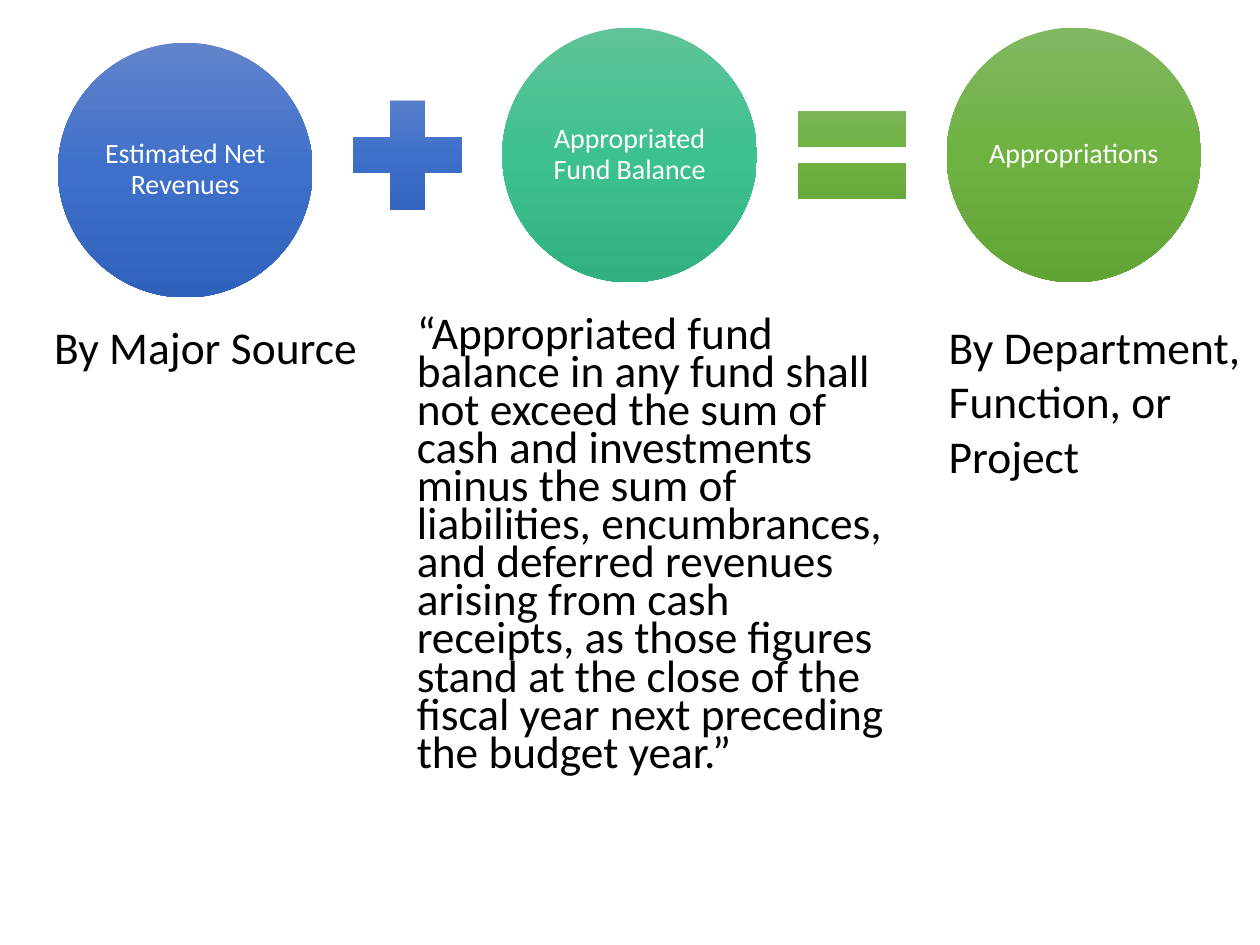
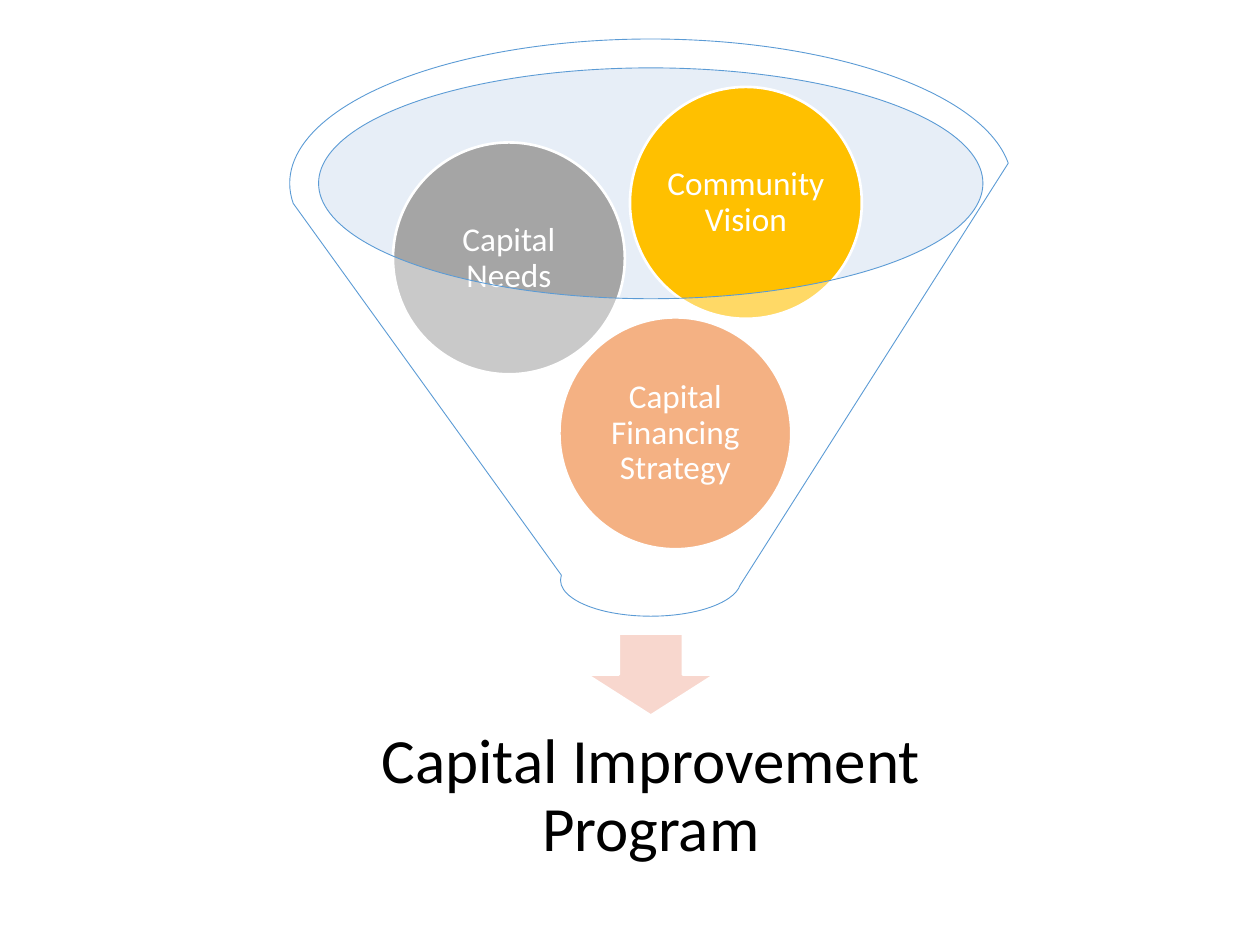
from copy import deepcopy

from lxml.etree import SubElement
from pptx import Presentation
from pptx.dml.color import RGBColor
from pptx.enum.shapes import MSO_SHAPE
from pptx.enum.text import MSO_ANCHOR, PP_ALIGN
from pptx.oxml.ns import qn
from pptx.util import Pt

FONT = "Calibri"
WHITE, BLACK = "FFFFFF", "000000"
BLUE = ("6183CB", "3E70CA", "3062BB")
TEAL = ("60C39A", "3DC18F", "31B080")
GREEN = ("81B861", "6FB242", "62A336")
RIM, FUNNEL_LINE, ARROW = "C4D5EB", "5B9BD5", "F8D7CE"
ORANGE, GRAY, GOLD = "ED7D31", "A5A5A5", "FFC000"


def rgb(value):
    return RGBColor.from_string(value)


def write(sp, text, size, color=BLACK, align=PP_ALIGN.LEFT, anchor=MSO_ANCHOR.TOP,
          spacing=1.0, insets=(7.2, 3.6)):
    tf = sp.text_frame
    tf.word_wrap = True
    tf.vertical_anchor = anchor
    tf.margin_left = tf.margin_right = Pt(insets[0])
    tf.margin_top = tf.margin_bottom = Pt(insets[1])
    p = tf.paragraphs[0]
    p.alignment = align
    p.line_spacing = spacing
    r = p.add_run()
    r.text = text
    r.font.name = FONT
    r.font.size = Pt(size)
    r.font.color.rgb = rgb(color)


def write_centered(sp, text, size, color, inset):
    write(sp, text, size, color, PP_ALIGN.CENTER, MSO_ANCHOR.MIDDLE, 0.9, (inset, inset))


def add_text_box(s, box):
    return s.shapes.add_textbox(*map(Pt, box))


def fill_gradient(sp, colors):
    sp.fill.gradient()
    sp.fill.gradient_angle = 270
    stops = sp._element.spPr.find(".//" + qn("a:gsLst"))
    stops.append(deepcopy(stops[-1]))
    for stop, position, color in zip(sp.fill.gradient_stops, (0, 0.5, 1), colors):
        stop.position = position
        stop.color.rgb = rgb(color)


def add_shape(s, kind, box, fill, opacity=None, line=None, width=1.5):
    sp = s.shapes.add_shape(kind, *map(Pt, box))
    sp.shadow.inherit = False
    if isinstance(fill, tuple):
        fill_gradient(sp, fill)
    else:
        sp.fill.solid()
        sp.fill.fore_color.rgb = rgb(fill)
    if opacity:
        color = sp._element.spPr.find(qn("a:solidFill"))[0]
        SubElement(color, qn("a:alpha")).set("val", str(opacity * 1000))
    if line:
        sp.line.color.rgb = rgb(line)
        sp.line.width = Pt(width)
    else:
        sp.line.fill.background()
    return sp


def add_equation(s, left, top):
    pitch, circle, symbol = 253.9, 145.6, 84.4
    terms = [("Estimated Net Revenues", BLUE, 8.6),
             ("Appropriated Fund Balance", TEAL, 0),
             ("Appropriations", GREEN, 0)]
    for i, (label, colors, drop) in enumerate(terms):
        sp = add_shape(s, MSO_SHAPE.OVAL, (left + i * pitch, top + drop, circle, circle), colors)
        write_centered(sp, label, 16, WHITE, 1.6)
    operators = [(MSO_SHAPE.MATH_PLUS, BLUE), (MSO_SHAPE.MATH_EQUAL, GREEN)]
    gap = (pitch - circle - symbol) / 2
    for i, (kind, colors) in enumerate(operators):
        x = left + circle + gap + i * pitch
        add_shape(s, kind, (x, top + (circle - symbol) / 2, symbol, symbol), colors)


def add_explanations(s, top):
    notes = [
        (231.1, 288, 278.6, 25.9, 0.7,
         "“Appropriated fund balance in any fund shall not exceed the sum of cash and "
         "investments minus the sum of liabilities, encumbrances, and deferred revenues "
         "arising from cash receipts, as those figures stand at the close of the fiscal "
         "year next preceding the budget year.”"),
        (535, 185, 101.5, 26, 1.0, "By Department, Function, or Project"),
        (23.8, 189.4, 38.9, 26, 1.0, "By Major Source"),
    ]
    for left, width, height, size, spacing, text in notes:
        write(add_text_box(s, (left, top, width, height)), text, size, spacing=spacing)


def add_funnel(s, left, top, width, height):
    center = left + width / 2

    def centered(offset, w, h):
        return center - w / 2, top + offset, w, h

    add_shape(s, MSO_SHAPE.OVAL, centered(16.6, 380.2, 131.8), RIM, opacity=40)
    add_shape(s, MSO_SHAPE.DOWN_ARROW, centered(339.8, 73.4, 46.8), ARROW, line=WHITE)
    result = add_text_box(s, centered(373, 353.5, 120.2))
    write_centered(result, "Capital Improvement Program", 36, BLACK, 20.2)
    ball = 132.5
    balls = [("Capital Financing Strategy", ORANGE, 154.1, 159.1),
             ("Capital Needs", GRAY, 59, 59.1),
             ("Community Vision", GOLD, 194.4, 27.4)]
    for label, color, dx, dy in balls:
        sp = add_shape(s, MSO_SHAPE.OVAL, (left + dx, top + dy, ball, ball), color, line=WHITE)
        write_centered(sp, label, 19, WHITE, 2)
    add_shape(s, MSO_SHAPE.FUNNEL, (left, top, width, height), WHITE, opacity=40,
              line=FUNNEL_LINE, width=0.5)


def add_slide(prs):
    s = prs.slides.add_slide(prs.slide_layouts[6])
    s.background.fill.solid()
    s.background.fill.fore_color.rgb = rgb(WHITE)
    return s


def main():
    prs = Presentation()
    prs.slide_width, prs.slide_height = Pt(720), Pt(540)
    budget = add_slide(prs)
    add_equation(budget, 33.1, 15.8)
    add_explanations(budget, 178.6)
    add_funnel(add_slide(prs), 165.6, 22.3, 412.6, 329.8)
    prs.save("out.pptx")


if __name__ == "__main__":
    main()
